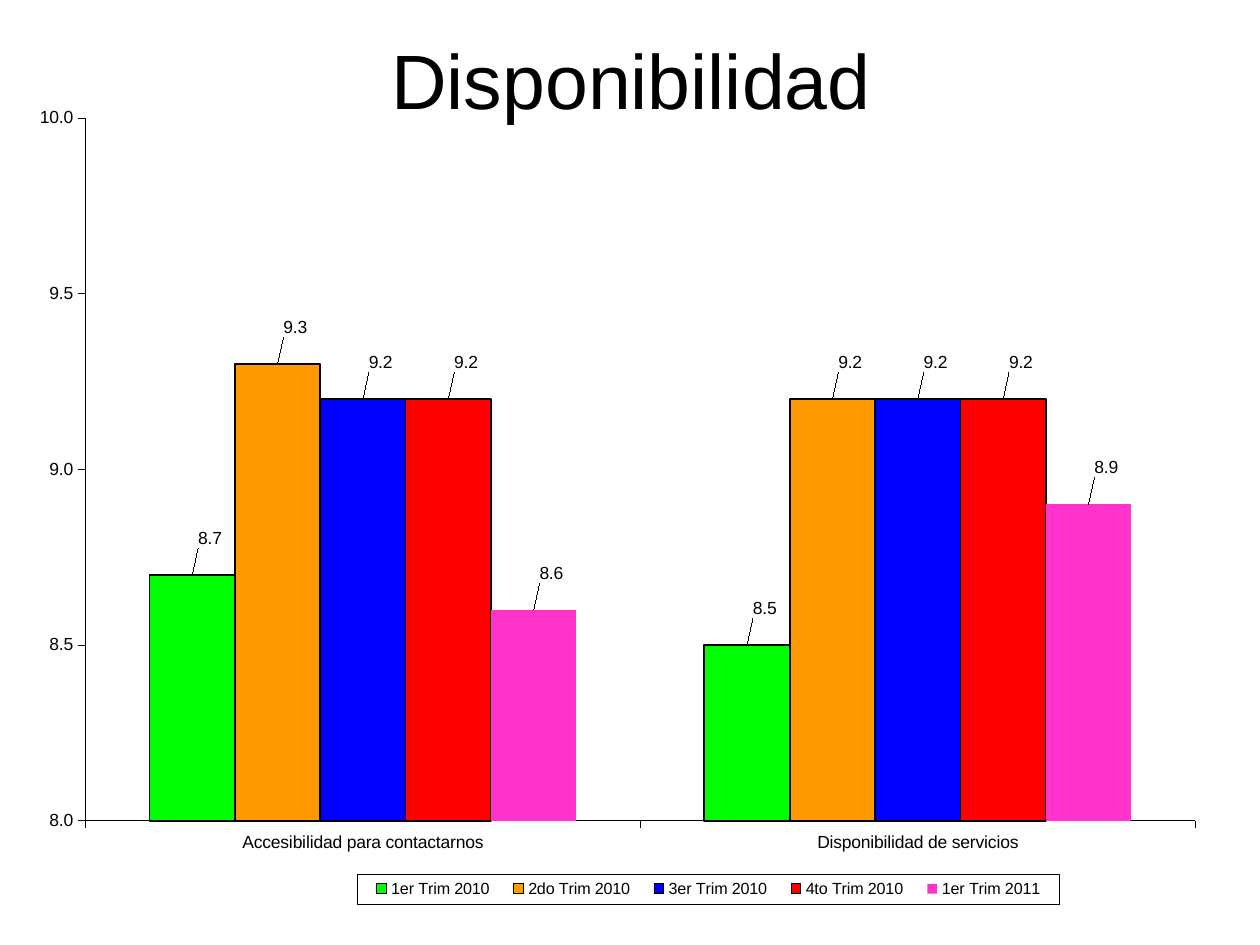
from dataclasses import dataclass
from lxml.etree import fromstring
from pptx import Presentation
from pptx.chart.data import CategoryChartData
from pptx.dml.color import RGBColor
from pptx.enum.chart import (
    XL_CHART_TYPE as ChartType,
    XL_LABEL_POSITION as LabelPosition,
    XL_LEGEND_POSITION as LegendPosition,
    XL_TICK_LABEL_POSITION as TickLabels,
    XL_TICK_MARK as TickMark,
)
from pptx.enum.text import MSO_ANCHOR as Anchor, PP_ALIGN as Align
from pptx.oxml import parse_xml
from pptx.oxml.ns import nsdecls, qn
from pptx.util import Inches, Pt


@dataclass(frozen=True)
class Theme:
    font: str = "Arial"
    ink: str = "000000"
    paper: str = "FFFFFF"
    title_size: float = 44
    chart_size: float = 10
    legend_size: float = 9.2
    axis_line: float = 0.25
    bar_line: float = 1


THEME = Theme()
NUMBER_FORMAT = "0.0"
CATEGORIES = ["Accesibilidad para contactarnos", "Disponibilidad de servicios"]
QUARTERS = [
    ("1er Trim 2010", (8.7, 8.5), "00FF00", True),
    ("2do Trim 2010", (9.3, 9.2), "FF9900", True),
    ("3er Trim 2010", (9.2, 9.2), "0000FF", True),
    ("4to Trim 2010", (9.2, 9.2), "FF0000", True),
    ("1er Trim 2011", (8.6, 8.9), "FF33CC", False),
]
PLOT_PLACE = {"x": 0.051, "y": 0.015, "w": 0.938, "h": 0.873}
LEGEND_PLACE = {"x": 0.281, "y": 0.954, "w": 0.593, "h": 0.037}
LABEL_SHIFT = {"x": 0.015, "y": -0.027}


def set_all(target, values):
    for name, value in values.items():
        setattr(target, name, value)


def set_font(font, size):
    set_all(font, {"name": THEME.font, "size": Pt(size), "bold": False})
    font.color.rgb = RGBColor.from_string(THEME.ink)


def set_line(line, width):
    line.color.rgb = RGBColor.from_string(THEME.ink)
    line.width = Pt(width)


def layout(place, modes=""):
    sizes = "".join(f'<c:{key} val="{value}"/>' for key, value in place.items())
    return parse_xml(
        f'<c:layout {nsdecls("c")}><c:manualLayout>{modes}{sizes}'
        "</c:manualLayout></c:layout>"
    )


def no_fill():
    return parse_xml(
        f'<c:spPr {nsdecls("c", "a")}><a:noFill/><a:ln><a:noFill/></a:ln></c:spPr>'
    )


def add_title(page, text):
    title = page.shapes.title
    set_all(title, {"left": Inches(0.51), "top": Inches(0),
                    "width": Inches(9), "height": Inches(1.25)})
    title.fill.solid()
    title.fill.fore_color.rgb = RGBColor.from_string(THEME.paper)
    title.text_frame.vertical_anchor = Anchor.MIDDLE
    para = title.text_frame.paragraphs[0]
    para.alignment = Align.CENTER
    span = para.add_run()
    span.text = text
    set_font(span.font, THEME.title_size)


def style_axes(chart):
    for axis in (chart.category_axis, chart.value_axis):
        set_all(axis, {"major_tick_mark": TickMark.OUTSIDE,
                       "minor_tick_mark": TickMark.NONE,
                       "has_major_gridlines": False})
        set_font(axis.tick_labels.font, THEME.chart_size)
        set_line(axis.format.line, THEME.axis_line)
    chart.category_axis.tick_label_position = TickLabels.LOW
    set_all(chart.value_axis, {"minimum_scale": 8, "maximum_scale": 10,
                               "major_unit": 0.5})
    set_all(chart.value_axis.tick_labels, {"number_format": NUMBER_FORMAT,
                                           "number_format_is_linked": False})


def shift_label(labels, index):
    label = parse_xml(
        f'<c:dLbl {nsdecls("c")}><c:idx val="{index}"/>'
        f'<c:numFmt formatCode="{NUMBER_FORMAT}" sourceLinked="0"/>'
        '<c:dLblPos val="outEnd"/><c:showLegendKey val="0"/><c:showVal val="1"/>'
        '<c:showCatName val="0"/><c:showSerName val="0"/>'
        '<c:showPercent val="0"/><c:showBubbleSize val="0"/></c:dLbl>'
    )
    label.insert(1, layout(LABEL_SHIFT))
    labels.insert(index, label)


def style_series(series, color, outlined):
    series.invert_if_negative = False
    series.format.fill.solid()
    series.format.fill.fore_color.rgb = RGBColor.from_string(color)
    if outlined:
        set_line(series.format.line, THEME.bar_line)
    else:
        series.format.line.fill.background()
    labels = series.data_labels
    set_all(labels, {"show_value": True, "number_format": NUMBER_FORMAT,
                     "number_format_is_linked": False,
                     "position": LabelPosition.OUTSIDE_END})
    set_font(labels.font, THEME.chart_size)
    for index in range(len(CATEGORIES)):
        shift_label(series._element.find(qn("c:dLbls")), index)


def style_legend(chart):
    chart.has_legend = True
    legend = chart.legend
    set_all(legend, {"position": LegendPosition.BOTTOM, "include_in_layout": False})
    set_font(legend.font, THEME.legend_size)
    element = legend._element
    for old in element.findall(qn("c:layout")):
        element.remove(old)
    modes = '<c:xMode val="edge"/><c:yMode val="edge"/>'
    element.find(qn("c:legendPos")).addnext(layout(LEGEND_PLACE, modes))
    border = parse_xml(
        f'<c:spPr {nsdecls("c", "a")}><a:noFill/><a:ln w="{Pt(THEME.axis_line)}">'
        f'<a:solidFill><a:srgbClr val="{THEME.ink}"/></a:solidFill></a:ln></c:spPr>'
    )
    element.find(qn("c:txPr")).addprevious(border)


def place_plot(chart):
    space = chart._chartSpace
    space.find(qn("c:txPr")).addprevious(no_fill())
    area = space.find(qn("c:chart")).find(qn("c:plotArea"))
    for old in area.findall(qn("c:layout")):
        area.remove(old)
    modes = ('<c:layoutTarget val="inner"/>'
             '<c:xMode val="edge"/><c:yMode val="edge"/>')
    area.insert(0, layout(PLOT_PLACE, modes))
    area.append(no_fill())


def add_quarter_chart(page):
    data = CategoryChartData(number_format=NUMBER_FORMAT)
    data.categories = CATEGORIES
    for name, values, _, _ in QUARTERS:
        data.add_series(name, values)
    chart = page.shapes.add_chart(
        ChartType.COLUMN_CLUSTERED, Inches(0.2), Inches(0.84),
        Inches(9.39), Inches(6.39), data,
    ).chart
    chart.has_title = False
    set_font(chart.font, THEME.chart_size)
    set_all(chart.plots[0], {"gap_width": 150, "overlap": 0,
                             "vary_by_categories": False})
    style_axes(chart)
    for series, (_, _, color, outlined) in zip(chart.plots[0].series, QUARTERS):
        style_series(series, color, outlined)
    style_legend(chart)
    place_plot(chart)


def main():
    deck = Presentation()
    set_all(deck, {"slide_width": Inches(10), "slide_height": Inches(7.5)})
    page = deck.slides.add_slide(deck.slide_layouts[5])
    add_title(page, "Disponibilidad")
    add_quarter_chart(page)
    deck.save("out.pptx")


if __name__ == "__main__":
    main()
